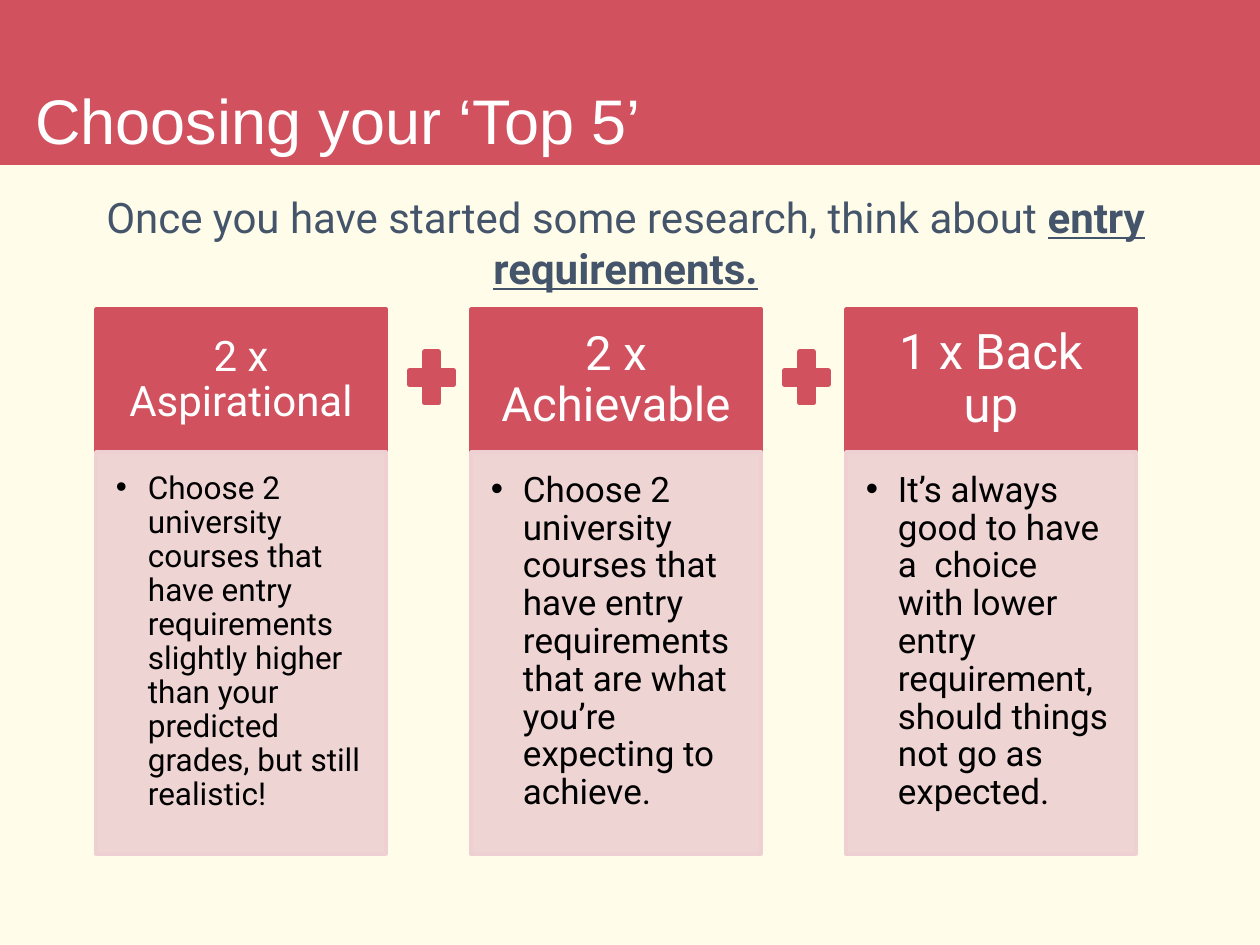
import pptx
import pptx.dml.color
import pptx.enum.shapes
import pptx.enum.text
import pptx.oxml.ns
import pptx.util
from lxml import etree

EMU_PER_PX = 914400 // 126
RED, CREAM, PINK = "D2515E", "FFFDEA", "EED0D2"
WHITE, BLACK, SLATE = "FFFFFF", "000000", "44546A"
CARD_LEFT, CARD_STEP, CARD_WIDTH = 96, 375, 290
HEADING_TOP, HEADING_HEIGHT, ADVICE_HEIGHT = 309, 143, 402
PLUS_LEFT, PLUS_TOP, PLUS_WIDTH, PLUS_HEIGHT = 402, 343, 59, 69

# heading, heading size, advice, advice size, right inset of the advice
CHOICES = [
    ("2 x Aspirational", 24,
     "Choose 2 university courses that have entry requirements slightly "
     "higher than your predicted grades, but still realistic!", 18, 10),
    ("2 x Achievable", 27,
     "Choose 2 university courses that have entry requirements that are "
     "what you’re expecting to achieve.", 20, 26),
    ("1 x Back up", 28,
     "It’s always good to have a  choice with lower entry requirement, "
     "should things not go as expected.", 20, 26),
]


def px(length):
    return pptx.util.Emu(length * EMU_PER_PX)


def paint(color_format, color):
    color_format.rgb = pptx.dml.color.RGBColor.from_string(color)


def fill_solid(fill, color, opacity=100):
    fill.solid()
    paint(fill.fore_color, color)
    if opacity < 100:
        for color_xml in fill._xPr.iter(pptx.oxml.ns.qn("a:srgbClr")):
            etree.SubElement(color_xml, pptx.oxml.ns.qn("a:alpha"),
                             val=str(opacity * 1000))


def add_block(slide, preset, box, color, line_width=0, opacity=100):
    block = slide.shapes.add_shape(preset, *map(px, box))
    block.shadow.inherit = False
    fill_solid(block.fill, color, opacity)
    if line_width:
        paint(block.line.color, color)
        block.line.width = pptx.util.Pt(line_width)
    else:
        block.line.fill.background()
    return block


def set_frame(frame, insets, anchor):
    """Insets run left, top, right, bottom."""
    frame.word_wrap = True
    frame.auto_size = pptx.enum.text.MSO_AUTO_SIZE.NONE
    frame.vertical_anchor = anchor
    (frame.margin_left, frame.margin_top,
     frame.margin_right, frame.margin_bottom) = map(px, insets)


def format_paragraph(paragraph, align, spacing, font_name, size, color):
    paragraph.alignment = align
    paragraph.line_spacing = spacing
    for run in paragraph.runs:
        run.font.name = font_name
        run.font.size = pptx.util.Pt(size)
        paint(run.font.color, color)


def add_bullet(paragraph, indent):
    properties = paragraph._p.get_or_add_pPr()
    properties.set("marL", str(px(indent)))
    properties.set("indent", str(-px(indent)))
    etree.SubElement(properties, pptx.oxml.ns.qn("a:buFont"), typeface="Arial")
    etree.SubElement(properties, pptx.oxml.ns.qn("a:buChar"), char="•")


def add_title(slide):
    title = slide.shapes.title
    banner = add_block(slide, pptx.enum.shapes.MSO_SHAPE.RECTANGLE,
                       (0, 0, 1260, 165), RED)
    title.element.addprevious(banner.element)
    title.left, title.top, title.width, title.height = map(
        px, (35, 26, 1181, 131))
    title.text_frame.text = "Choosing your ‘Top 5’"
    set_frame(title.text_frame, (0, 0, 0, 0),
              pptx.enum.text.MSO_ANCHOR.BOTTOM)
    format_paragraph(title.text_frame.paragraphs[0],
                     pptx.enum.text.PP_ALIGN.LEFT, 0.8, "Arial", 36, WHITE)


def add_introduction(slide):
    frame = slide.shapes.add_textbox(
        *map(px, (35, 186, 1181, 115))).text_frame
    set_frame(frame, (13, 6, 13, 6), pptx.enum.text.MSO_ANCHOR.TOP)
    paragraph = frame.paragraphs[0]
    paragraph.text = "Once you have started some research, think about "
    emphasis = paragraph.add_run()
    emphasis.text = "entry requirements."
    emphasis.font.bold = emphasis.font.underline = True
    format_paragraph(paragraph, pptx.enum.text.PP_ALIGN.CENTER, 1.0,
                     "Roboto", 24, SLATE)


def add_choice(slide, left, heading, heading_size, advice, advice_size,
               advice_right):
    rectangle = pptx.enum.shapes.MSO_SHAPE.RECTANGLE
    header = add_block(slide, rectangle,
                       (left, HEADING_TOP, CARD_WIDTH, HEADING_HEIGHT), RED, 2)
    header.text_frame.text = heading
    set_frame(header.text_frame, (26, 15, 26, 15),
              pptx.enum.text.MSO_ANCHOR.MIDDLE)
    format_paragraph(header.text_frame.paragraphs[0],
                     pptx.enum.text.PP_ALIGN.CENTER, 0.9,
                     "Roboto", heading_size, WHITE)

    body = add_block(slide, rectangle,
                     (left, HEADING_TOP + HEADING_HEIGHT, CARD_WIDTH,
                      ADVICE_HEIGHT), PINK, 2, opacity=90)
    body.text_frame.text = advice
    set_frame(body.text_frame, (20, 20, advice_right, 30),
              pptx.enum.text.MSO_ANCHOR.TOP)
    paragraph = body.text_frame.paragraphs[0]
    add_bullet(paragraph, 32)
    format_paragraph(paragraph, pptx.enum.text.PP_ALIGN.LEFT, 0.9,
                     "Roboto", advice_size, BLACK)


def main():
    presentation = pptx.Presentation()
    presentation.slide_width = pptx.util.Inches(10)
    presentation.slide_height = pptx.util.Inches(7.5)
    slide = presentation.slides.add_slide(presentation.slide_layouts[5])
    fill_solid(slide.background.fill, CREAM)
    add_title(slide)
    for index, choice in enumerate(CHOICES):
        add_choice(slide, CARD_LEFT + index * CARD_STEP, *choice)
    add_introduction(slide)
    for index in range(len(CHOICES) - 1):
        add_block(slide, pptx.enum.shapes.MSO_SHAPE.MATH_PLUS,
                  (PLUS_LEFT + index * CARD_STEP, PLUS_TOP,
                   PLUS_WIDTH, PLUS_HEIGHT), RED, 3)
    presentation.save("out.pptx")


if __name__ == "__main__":
    main()
